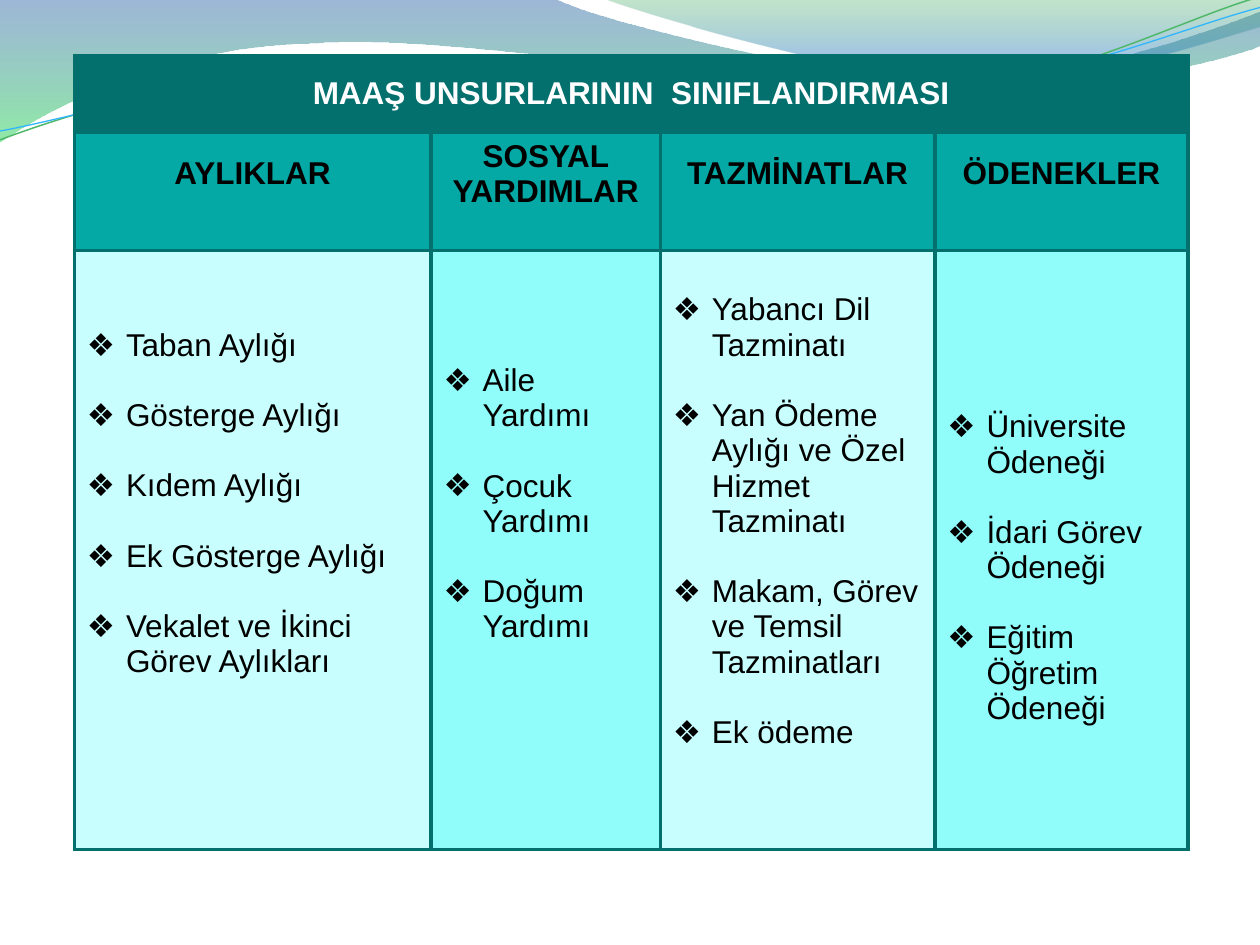
import math

import pptx
import pptx.dml.color
import pptx.enum.text
import pptx.oxml
import pptx.oxml.ns
import pptx.util

Inches, Pt = pptx.util.Inches, pptx.util.Pt
RGB = pptx.dml.color.RGBColor.from_string
PP_ALIGN = pptx.enum.text.PP_ALIGN
ANCHOR = pptx.enum.text.MSO_ANCHOR
NS = pptx.oxml.ns.nsdecls("a")

COLORS = {
    "border": "03706E", "heading": "04A8A4", "light": "C8FEFD", "aqua": "91FDFA",
    "white": "FFFFFF", "black": "000000",
    "blue": "2960A7", "mint": "35DA5E", "green": "36A752", "sky": "2472D3",
    "green_line": "50B86A", "blue_line": "31B6FD",
}
LINE_HEIGHT = 0.28
RIBBON_TILT = 2.7

deck = pptx.Presentation()
deck.slide_width, deck.slide_height = Inches(10), Inches(7.5)
slide = deck.slides.add_slide(deck.slide_layouts[6])


def draw_curve(start, segments, closed):
    ends = [(Inches(segment[-2]), Inches(segment[-1])) for segment in segments]
    builder = slide.shapes.build_freeform(Inches(start[0]), Inches(start[1]))
    builder.add_line_segments(ends, close=closed)
    curve = builder.convert_to_shape()
    curve.shadow.inherit = False
    straight_lines = curve._element.findall(".//" + pptx.oxml.ns.qn("a:lnTo"))
    for straight, segment in zip(straight_lines, segments):
        if len(segment) == 6:
            points = "".join(
                f'<a:pt x="{Inches(x) - curve.left}" y="{Inches(y) - curve.top}"/>'
                for x, y in zip(segment[::2], segment[1::2]))
            bend = pptx.oxml.parse_xml(f"<a:cubicBezTo {NS}>{points}</a:cubicBezTo>")
            straight.getparent().replace(straight, bend)
    return curve


def fill_cell(cell, paragraphs, color, cell_format, font_format, bulleted=False):
    for name, value in cell_format.items():
        setattr(cell, name, value)
    cell.fill.solid()
    cell.fill.fore_color.rgb = RGB(COLORS[color])
    for index, text in enumerate(paragraphs):
        frame = cell.text_frame
        paragraph = frame.paragraphs[0] if index == 0 else frame.add_paragraph()
        paragraph.alignment = PP_ALIGN.LEFT if bulleted else PP_ALIGN.CENTER
        if index:
            paragraph.space_before = Pt(20)
        run = paragraph.add_run()
        run.text = text
        for name, value in font_format.items():
            setattr(run.font, name, value)
        run.font.color.rgb = RGB(COLORS["white" if color == "border" else "black"])
        if bulleted:
            properties = paragraph._p.get_or_add_pPr()
            properties.set("marL", str(Inches(0.31)))
            properties.set("indent", str(Inches(-0.31)))
            properties.append(pptx.oxml.parse_xml(f'<a:buFont {NS} typeface="Arial"/>'))
            properties.append(pptx.oxml.parse_xml(f'<a:buChar {NS} char="❖"/>'))


waves = [
    ((0, 0), [(4.4, -0.01), (4.76, 0.17, 6.64, 0.63, 7.58, 0.63), (8.53, 0.63, 9.58, 0.26, 10, 0.09),
              (10.01, 0.36), (9.83, 0.44, 8.7, 0.76, 7.46, 0.75), (6.22, 0.75, 3.82, 0.28, 2.57, 0.34),
              (1.29, 0.36, 0.46, 0.83, -0.01, 1.13), (0, 0)],
     [(0, "blue", 45), (1, "mint", 55)]),
    ((4.79, -0.01), [(5.09, 0.11, 6.82, 0.62, 7.69, 0.65), (8.56, 0.69, 9.61, 0.32, 10, 0.21),
                     (10, 0), (4.79, -0.01)],
     [(0, "green", 30), (0.8, "sky", 45)]),
]
for start, segments, stops in waves:
    wave = draw_curve(start, segments, True)
    wave.line.fill.background()
    wave.fill.gradient()
    wave.fill.gradient_angle = 270
    for stop, (position, color, opacity) in zip(wave.fill.gradient_stops, stops):
        stop.position = position
        stop.color.rgb = RGB(COLORS[color])
        stop._gs[0].append(pptx.oxml.parse_xml(f'<a:alpha {NS} val="{opacity * 1000}"/>'))

ribbons = [
    ((0, 1.11), [(0.48, 0.93, 1.58, 0.57, 2.77, 0.52), (3.95, 0.47, 5.93, 0.89, 7.13, 0.8),
                 (8.33, 0.71, 9.38, 0.15, 9.98, -0.02)], (4.99, 0.57), "green_line", 0.85),
    ((0, 1.04), [(0.47, 0.96, 1.64, 0.61, 2.83, 0.56), (4.03, 0.51, 5.97, 0.84, 7.17, 0.75),
                 (8.36, 0.67, 9.41, 0.21, 10, 0.06)], (5, 0.59), "blue_line", 0.75),
]
cosine, sine = math.cos(math.radians(RIBBON_TILT)), math.sin(math.radians(RIBBON_TILT))
for start, segments, (center_x, center_y), color, width in ribbons:
    leveled = []
    for segment in [start, *segments]:
        offsets = [(x - center_x, y - center_y) for x, y in zip(segment[::2], segment[1::2])]
        leveled.append([value for dx, dy in offsets for value in (
            center_x + dx * cosine - dy * sine, center_y + dx * sine + dy * cosine)])
    ribbon = draw_curve(leveled[0], leveled[1:], False)
    ribbon.rotation = 360 - RIBBON_TILT
    ribbon.fill.background()
    ribbon.line.color.rgb = RGB(COLORS[color])
    ribbon.line.width = Pt(width)

groups = [
    ("AYLIKLAR", 2.83, "light", 2, ANCHOR.TOP,
     ["Taban Aylığı", "Gösterge Aylığı", "Kıdem Aylığı", "Ek Gösterge Aylığı",
      "Vekalet ve İkinci Görev Aylıkları"]),
    ("SOSYAL YARDIMLAR", 1.82, "aqua", 3, ANCHOR.TOP,
     ["Aile Yardımı", "Çocuk Yardımı", "Doğum Yardımı"]),
    ("TAZMİNATLAR", 2.18, "light", 1, ANCHOR.TOP,
     ["Yabancı Dil Tazminatı", "Yan Ödeme Aylığı ve Özel Hizmet Tazminatı",
      "Makam, Görev ve Temsil Tazminatları", "Ek ödeme"]),
    ("ÖDENEKLER", 2.01, "aqua", 1, ANCHOR.MIDDLE,
     ["Üniversite Ödeneği", "İdari Görev Ödeneği", "Eğitim Öğretim Ödeneği"]),
]
row_heights = [0.61, 0.93, 4.75]
heading_font = {"name": "Arial", "size": Pt(18), "bold": True}
item_font = {**heading_font, "bold": False}

salary_table = slide.shapes.add_table(
    len(row_heights), len(groups), Inches(0.59), Inches(0.44), Inches(8.84), Inches(sum(row_heights))
).table
for row, height in zip(salary_table.rows, row_heights):
    row.height = Inches(height)
for cell in salary_table.iter_cells():
    for side in "LRTB":
        cell._tc.get_or_add_tcPr().append(pptx.oxml.parse_xml(
            f'<a:ln{side} {NS} w="{Pt(2.25)}"><a:solidFill><a:srgbClr val="{COLORS["border"]}"/>'
            f'</a:solidFill></a:ln{side}>'))

salary_title = salary_table.cell(0, 0)
salary_title.merge(salary_table.cell(0, len(groups) - 1))
fill_cell(salary_title, ["MAAŞ UNSURLARININ  SINIFLANDIRMASI"], "border",
          {"vertical_anchor": ANCHOR.MIDDLE}, heading_font)

for column, (heading, width, color, lines_above, anchor, items) in enumerate(groups):
    salary_table.columns[column].width = Inches(width)
    fill_cell(salary_table.cell(1, column), [heading], "heading",
              {"vertical_anchor": ANCHOR.MIDDLE, "margin_bottom": Inches(0.05 + LINE_HEIGHT)}, heading_font)
    fill_cell(salary_table.cell(2, column), items, color,
              {"vertical_anchor": anchor, "margin_top": Inches(0.05 + LINE_HEIGHT * lines_above)},
              item_font, bulleted=True)

deck.save("out.pptx")
